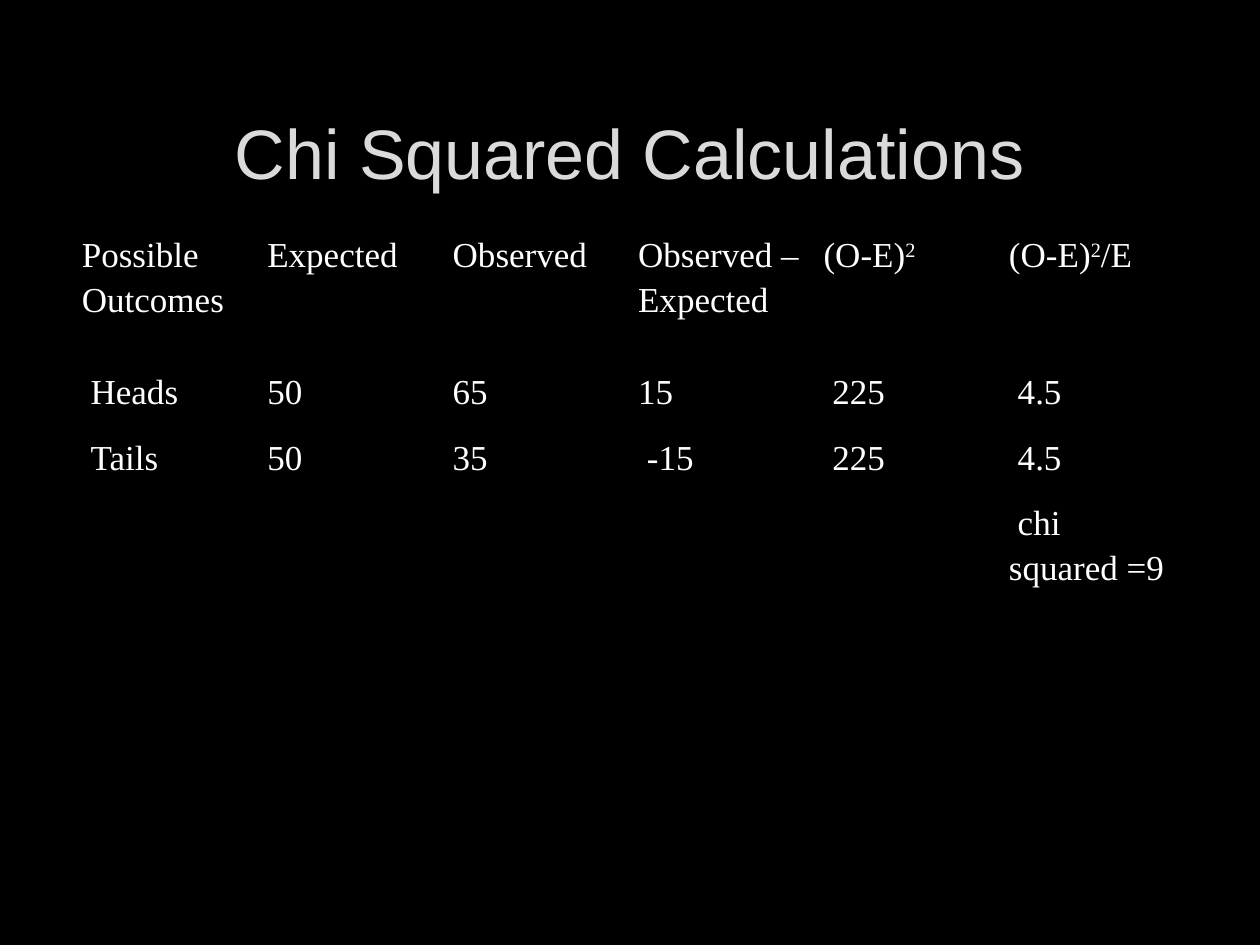
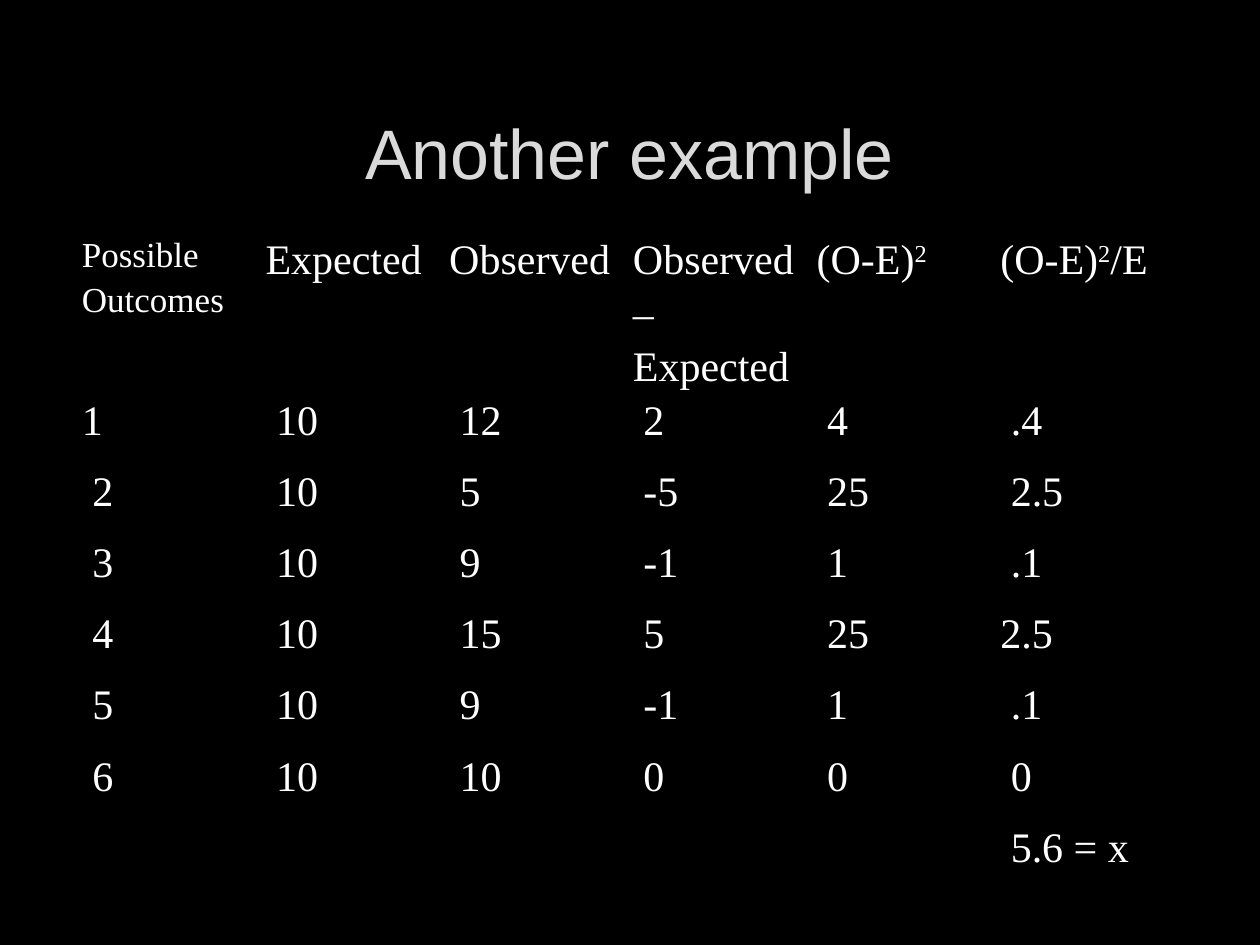
from dataclasses import dataclass

from lxml import etree
from pptx import Presentation
from pptx import util as u
from pptx.dml.color import RGBColor
from pptx.enum import text
from pptx.oxml import ns

BLACK = RGBColor(0x00, 0x00, 0x00)
WHITE = RGBColor(0xFF, 0xFF, 0xFF)
TITLE_GREY = RGBColor(0xDA, 0xDA, 0xDA)
OUTLINE_GREY = RGBColor(0x40, 0x40, 0x40)
TITLE_FONT = "Arial"
TABLE_FONT = "Times New Roman"
TITLE_ONLY_LAYOUT = 5
INDENT_MARK = "~"
NO_BREAK_SPACE = chr(160)
HEADINGS = (
    "Possible Outcomes",
    "Expected",
    "Observed",
    "Observed – Expected",
    "(O-E)^2",
    "(O-E)^2^/E",
)


@dataclass(frozen=True)
class ChiSquaredSlide:
    title: str
    column_width: float
    row_heights: tuple[float, ...]
    font_size: int
    rows: tuple[str, ...]
    total: str


SLIDES = (
    ChiSquaredSlide(
        title="Chi Squared Calculations",
        column_width=1.472,
        row_heights=(1.09, 0.52, 0.52, 1.09),
        font_size=20,
        rows=("~Heads 50 65 15 ~225 ~4.5", "~Tails 50 35 ~-15 ~225 ~4.5"),
        total="~chi squared =9",
    ),
    ChiSquaredSlide(
        title="Another example",
        column_width=1.458,
        row_heights=(1.13,) + (0.565,) * 7,
        font_size=24,
        rows=(
            "1 ~10 ~12 ~2 ~4 ~.4",
            "~2 ~10 ~5 ~-5 ~25 ~2.5",
            "~3 ~10 ~9 ~-1 ~1 ~.1",
            "~4 ~10 ~15 ~5 ~25 2.5",
            "~5 ~10 ~9 ~-1 ~1 ~.1",
            "~6 ~10 ~10 ~0 ~0 ~0",
        ),
        total="~5.6 = x",
    ),
)


def build_line(tag: str, color: RGBColor, width: float, alpha: int = 100):
    line = etree.Element(ns.qn(tag), w=str(u.Pt(width)))
    fill = etree.SubElement(line, ns.qn("a:solidFill"))
    shade = etree.SubElement(fill, ns.qn("a:srgbClr"), val=str(color))
    if alpha < 100:
        etree.SubElement(shade, ns.qn("a:alpha"), val=str(alpha * 1000))
    return line


def add_run(paragraph, words: str, font: str, size: int, color: RGBColor):
    run = paragraph.add_run()
    run.text = words
    run.font.name = font
    run.font.size = u.Pt(size)
    run.font.color.rgb = color
    return run


def draw_title(slide, words: str) -> None:
    title = slide.shapes.title
    title.left, title.top = u.Inches(0.75), u.Inches(0.67)
    title.width, title.height = u.Inches(8.49), u.Inches(1.06)
    title.text_frame.vertical_anchor = text.MSO_ANCHOR.MIDDLE
    paragraph = title.text_frame.paragraphs[0]
    paragraph.alignment = text.PP_ALIGN.CENTER
    run = add_run(paragraph, words, TITLE_FONT, 40, TITLE_GREY)
    run.font._element.insert(0, build_line("a:ln", OUTLINE_GREY, 0.75, alpha=10))


def format_cell(cell) -> None:
    cell.margin_left = cell.margin_right = u.Inches(0.07)
    cell.margin_top = cell.margin_bottom = 0
    cell.fill.solid()
    cell.fill.fore_color.rgb = BLACK
    properties = cell._tc.get_or_add_tcPr()
    for position, tag in enumerate(("a:lnL", "a:lnR", "a:lnT", "a:lnB")):
        properties.insert(position, build_line(tag, BLACK, 1))


def write_cell(cell, words: str, size: int) -> None:
    paragraph = cell.text_frame.paragraphs[0]
    paragraph.line_spacing = 1.15
    for index, piece in enumerate(words.split("^")):
        piece = piece.replace(INDENT_MARK, NO_BREAK_SPACE)
        run = add_run(paragraph, piece, TABLE_FONT, size, WHITE)
        if index % 2:
            run.font._element.set("baseline", "30000")


def draw_table(slide, content: ChiSquaredSlide) -> None:
    blanks = ("",) * (len(HEADINGS) - 1)
    grid = [HEADINGS, *(row.split() for row in content.rows), (*blanks, content.total)]
    frame = slide.shapes.add_table(
        len(grid),
        len(HEADINGS),
        u.Inches(0.58),
        u.Inches(1.83),
        u.Inches(content.column_width * len(HEADINGS)),
        u.Inches(sum(content.row_heights)),
    )
    table = frame.table
    table.first_row = table.horz_banding = False
    for column in table.columns:
        column.width = u.Inches(content.column_width)
    for row, height, values in zip(table.rows, content.row_heights, grid):
        row.height = u.Inches(height)
        for cell, words in zip(row.cells, values):
            format_cell(cell)
            if words:
                size = 20 if words == HEADINGS[0] else content.font_size
                write_cell(cell, words, size)


def main() -> None:
    presentation = Presentation()
    presentation.slide_width = u.Inches(10)
    presentation.slide_height = u.Inches(7.5)
    background = presentation.slide_master.background.fill
    background.solid()
    background.fore_color.rgb = BLACK
    layout = presentation.slide_layouts[TITLE_ONLY_LAYOUT]
    for content in SLIDES:
        slide = presentation.slides.add_slide(layout)
        draw_title(slide, content.title)
        draw_table(slide, content)
    presentation.save("out.pptx")


if __name__ == "__main__":
    main()
